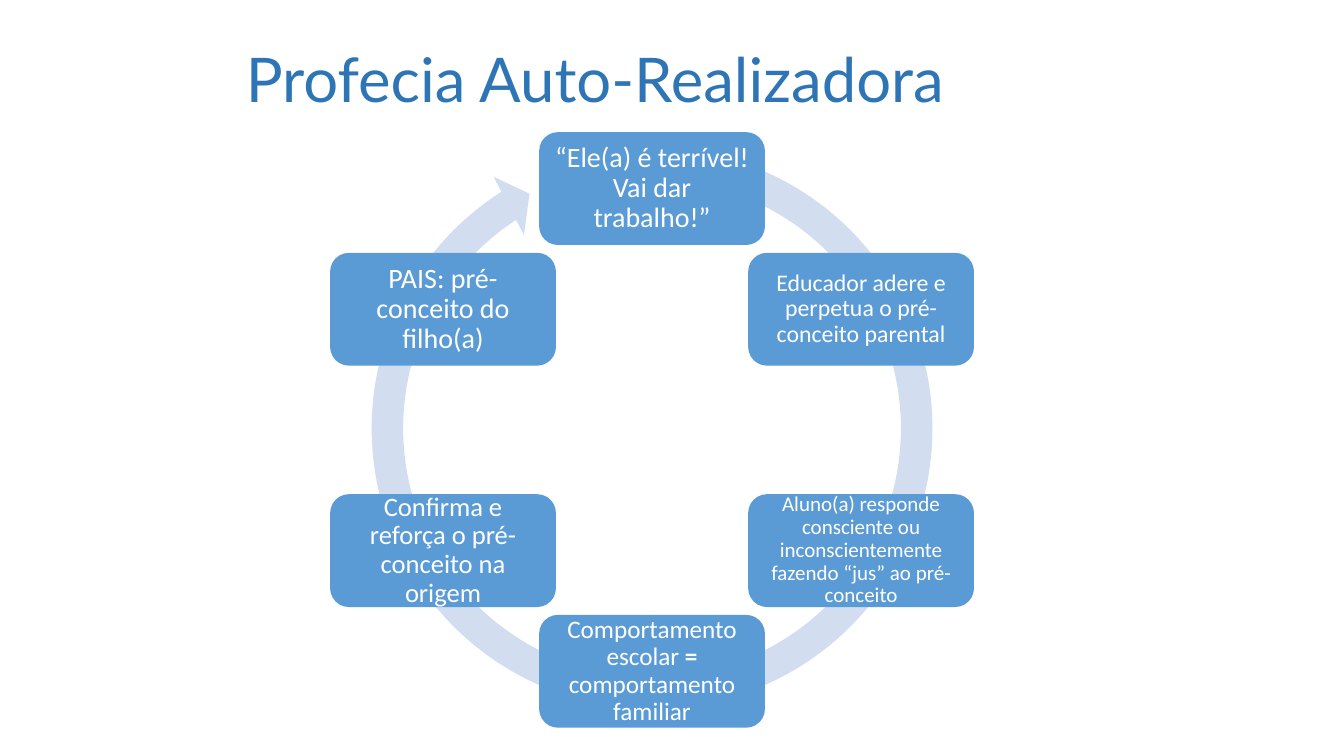
"""Build a slide showing the self-fulfilling prophecy as a cycle of six steps."""
import math

from pptx import Presentation
from pptx.dml.color import RGBColor
from pptx.enum import shapes, text
from pptx.util import Pt

COLORS = {"title": "2E75B6", "ring": "D2DEEF", "box": "5B9BD5", "label": "FFFFFF"}
TITLE = "Profecia Auto-Realizadora"
STEPS = [
    (["“Ele(a) é terrível! Vai dar trabalho!”"], 20),
    (["Educador adere e perpetua o pré-conceito parental"], 17),
    (["Aluno(a) responde consciente ou inconscientemente fazendo “jus” ao pré-conceito"], 15),
    (["Comportamento escolar ", "=", " comportamento familiar"], 18),
    (["Confirma e reforça o pré-conceito na origem"], 19),
    (["PAIS: pré-conceito do filho(a)"], 20),
]
BOLD = {"="}
CENTER_X, CENTER_Y, RADIUS = 465.8, 307.1, 172.4
BOX_W, BOX_H = 161.3, 80.6
RING_SIZE = 424.8
RING_ADJUSTMENTS = [0.053, 3.126, 142.333, 171.24, 0.055]
INSET_RATIO = 0.3


def write(tf, runs, size, font, color, align=text.PP_ALIGN.LEFT, spacing=1.0):
    p = tf.paragraphs[0]
    p.alignment = align
    p.line_spacing = spacing
    for words in runs:
        r = p.add_run()
        r.text = words
        r.font.size = Pt(size)
        r.font.name = font
        r.font.bold = words in BOLD
        r.font.color.rgb = RGBColor.from_string(COLORS[color])


def add_shape(s, kind, left, top, width, height, color):
    sp = s.shapes.add_shape(kind, Pt(left), Pt(top), Pt(width), Pt(height))
    sp.shadow.inherit = False
    sp.fill.solid()
    sp.fill.fore_color.rgb = RGBColor.from_string(COLORS[color])
    sp.line.fill.background()
    return sp


def add_step(s, index, runs, size):
    angle = 2 * math.pi * index / len(STEPS)
    left = CENTER_X + RADIUS * math.sin(angle) - BOX_W / 2
    top = CENTER_Y - RADIUS * math.cos(angle) - BOX_H / 2
    sp = add_shape(s, shapes.MSO_SHAPE.ROUNDED_RECTANGLE, left, top, BOX_W, BOX_H, "box")
    tf = sp.text_frame
    tf.word_wrap = True
    tf.vertical_anchor = text.MSO_ANCHOR.MIDDLE
    inset = Pt(INSET_RATIO * size)
    tf.margin_left = tf.margin_right = tf.margin_top = tf.margin_bottom = inset
    write(tf, runs, size, "Calibri", "label", align=text.PP_ALIGN.CENTER, spacing=0.9)


def main():
    prs = Presentation()
    prs.slide_width, prs.slide_height = Pt(960), Pt(540)
    s = prs.slides.add_slide(prs.slide_layouts[6])

    title = s.shapes.add_textbox(Pt(168.5), Pt(25.9), Pt(607.7), Pt(60.5))
    title.text_frame.word_wrap = False
    write(title.text_frame, [TITLE], 44, "Lato", "title")

    ring = add_shape(s, shapes.MSO_SHAPE.CIRCULAR_ARROW, CENTER_X - RING_SIZE / 2, 93.6,
                     RING_SIZE, RING_SIZE, "ring")
    for i, value in enumerate(RING_ADJUSTMENTS):
        ring.adjustments[i] = value

    for i, (runs, size) in enumerate(STEPS):
        add_step(s, i, runs, size)
    prs.save("out.pptx")


if __name__ == "__main__":
    main()
